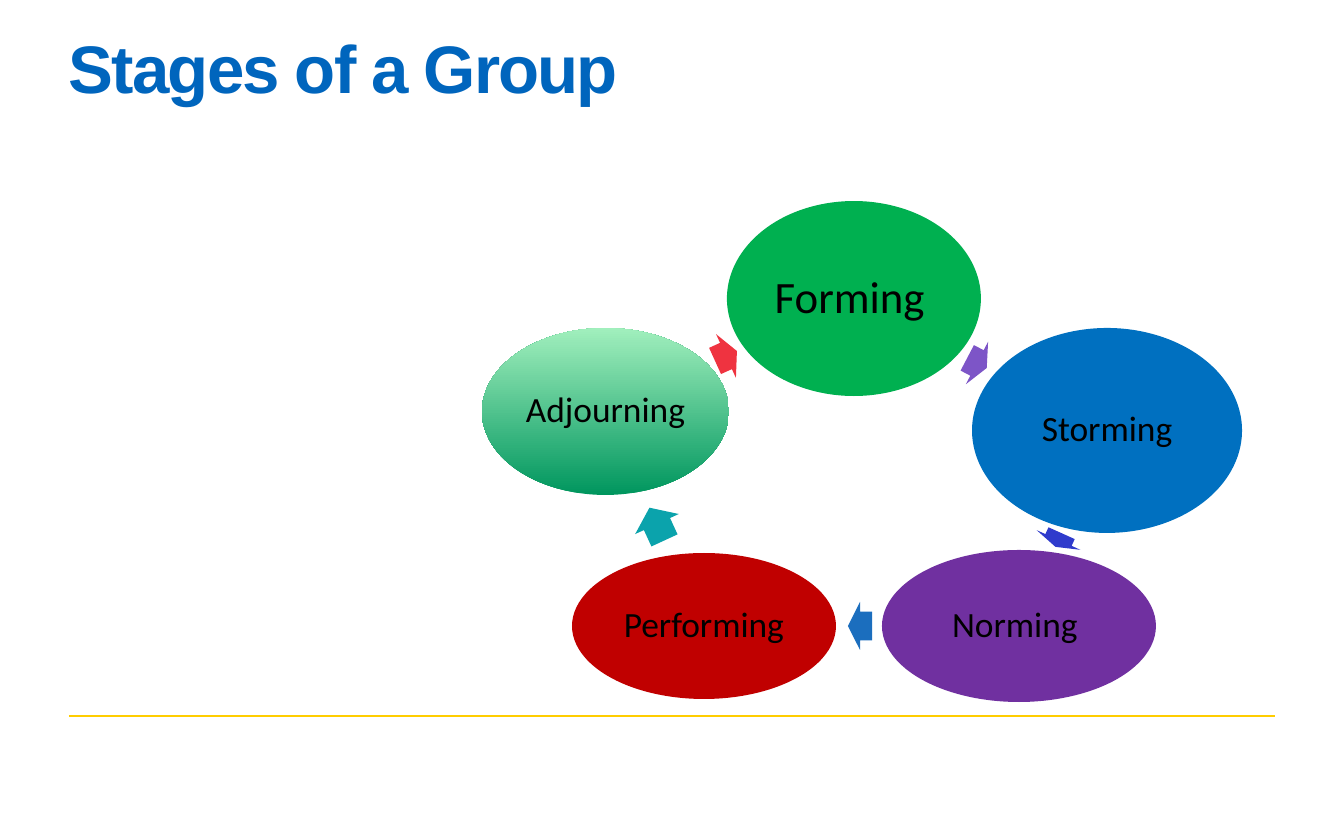
from pptx import Presentation
from pptx import util as u
from pptx.dml.color import RGBColor
from pptx.enum import shapes, text
from lxml import etree

PX = 9144000 / 1344
COLORS = {
    "title": "0065BD", "rule": "FFCD00", "label": "000000",
    "forming": "00B050", "storming": "0070C0", "norming": "7030A0",
    "performing": "C00000", "adjourning_low": "00965E", "adjourning_high": "A1EFBD",
    "to_storming": "7D55C7", "to_norming": "2F3BCC", "to_performing": "1B6EBE",
    "to_adjourning": "0BA3AC", "to_forming": "EF3340",
}
STAGES = [
    ([("Forming", 24), (" ", 20)], (727, 201, 254, 195), ["forming"],
     "to_storming", (966, 339, 22, 48), 27.6),
    ([("Storming", 19)], (972, 328, 270, 205), ["storming"],
     "to_norming", (1051, 516, 15, 48), 114.2),
    ([("Norming ", 19)], (882, 550, 274, 152), ["norming"],
     "to_performing", (848, 602, 24, 48), 180),
    ([("Performing", 19)], (572, 553, 264, 146), ["performing"],
     "to_adjourning", (639, 500, 36, 48), 245.3),
    ([("Adjourning", 19)], (482, 328, 247, 167), ["adjourning_low", "adjourning_high"],
     "to_forming", (714, 332, 24, 48), 335.6),
]


def px(*lengths):
    return [u.Emu(round(length * PX)) for length in lengths]


def color(name):
    return RGBColor.from_string(COLORS[name])


def paint(shape, fills):
    shape.shadow.inherit = False
    shape.line.fill.background()
    if len(fills) == 1:
        shape.fill.solid()
        shape.fill.fore_color.rgb = color(fills[0])
        return
    shape.fill.gradient()
    shape.fill.gradient_angle = 90
    for stop, name in zip(shape.fill.gradient_stops, fills):
        stop.color.rgb = color(name)


def set_insets(frame, inset):
    frame.word_wrap = True
    frame.margin_left = frame.margin_right = inset
    frame.margin_top = frame.margin_bottom = inset


def add_run(paragraph, words, size, font, name):
    run = paragraph.add_run()
    run.text = words
    run.font.size = u.Pt(size)
    run.font.name = font
    run.font.color.rgb = color(name)
    return run


def add_title(slide, words):
    frame = slide.shapes.add_textbox(*px(69, 39, 1207, 146)).text_frame
    set_insets(frame, 0)
    heading = frame.paragraphs[0]
    heading.line_spacing = 0.85
    run = add_run(heading, words, 36, "Arial", "title")
    run.font.bold = True
    run.font._element.set("spc", "-100")


def add_rule(slide):
    rule = slide.shapes.add_connector(shapes.MSO_CONNECTOR.STRAIGHT, *px(69, 716, 1275, 716))
    rule.line.color.rgb = color("rule")
    rule.line.width = u.Pt(1)
    properties = rule._element.spPr
    namespace = properties.nsmap["a"]
    etree.SubElement(properties, f"{{{namespace}}}effectLst")


def add_stage(slide, label, box, fills):
    stage = slide.shapes.add_shape(shapes.MSO_SHAPE.OVAL, *px(*box))
    paint(stage, fills)
    frame = stage.text_frame
    set_insets(frame, px(4)[0])
    frame.vertical_anchor = text.MSO_ANCHOR.MIDDLE
    paragraph = frame.paragraphs[0]
    paragraph.alignment = text.PP_ALIGN.CENTER
    paragraph.line_spacing = 0.9
    for words, size in label:
        add_run(paragraph, words, size, "Calibri", "label")


def add_arrow(slide, box, rotation, fill):
    arrow = slide.shapes.add_shape(shapes.MSO_SHAPE.RIGHT_ARROW, *px(*box))
    arrow.adjustments[0] = 0.6
    arrow.adjustments[1] = 0.5
    arrow.rotation = rotation
    paint(arrow, [fill])


def main():
    deck = Presentation()
    deck.slide_width, deck.slide_height = px(1344, 840)
    slide = deck.slides.add_slide(deck.slide_layouts[6])
    add_rule(slide)
    add_title(slide, "Stages of a Group")
    for label, box, fills, arrow_fill, arrow_box, rotation in STAGES:
        add_stage(slide, label, box, fills)
        add_arrow(slide, arrow_box, rotation, arrow_fill)
    deck.save("out.pptx")


if __name__ == "__main__":
    main()
